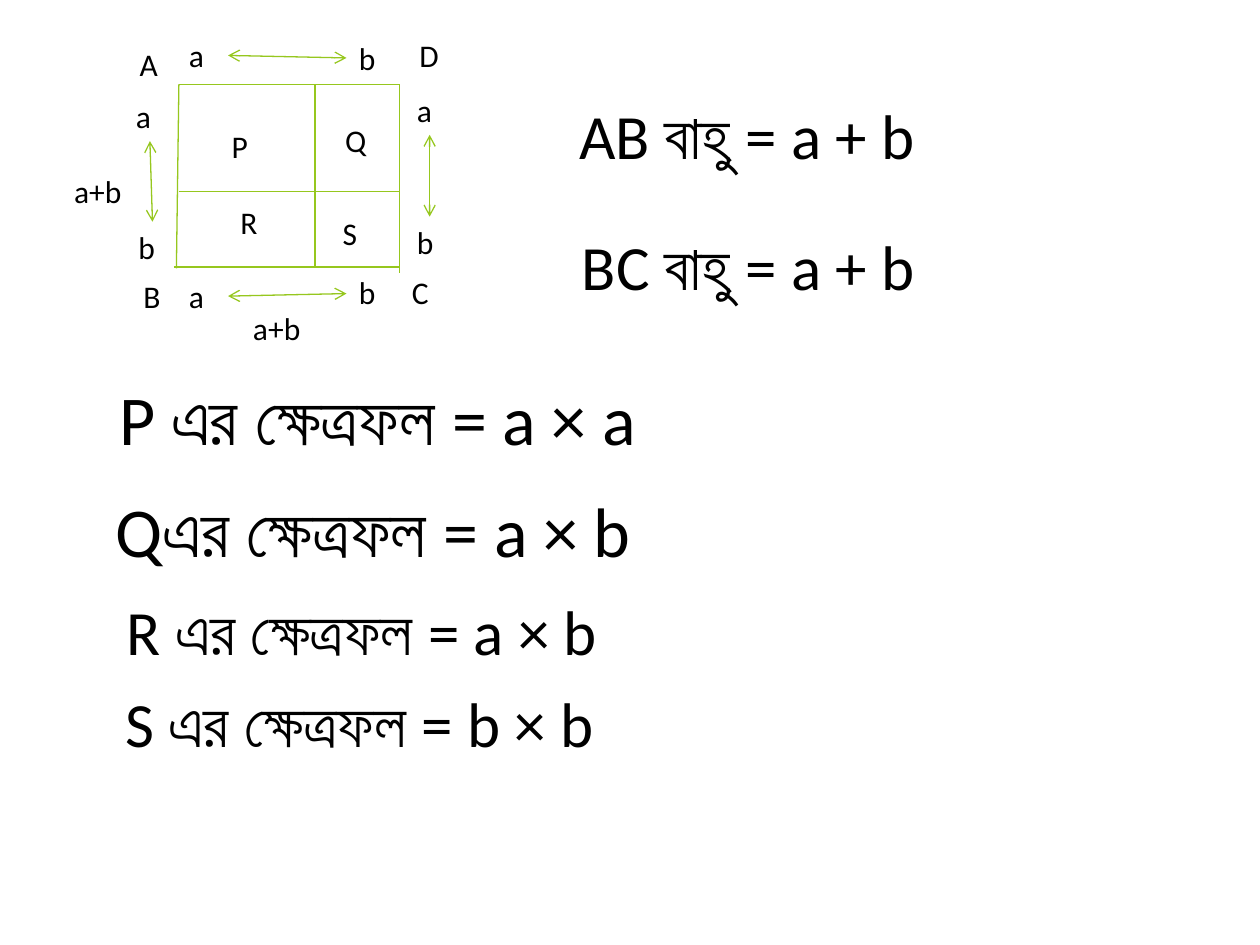
from lxml import etree
from pptx import Presentation
from pptx.dml.color import RGBColor
from pptx.enum.shapes import MSO_CONNECTOR
from pptx.enum.text import MSO_AUTO_SIZE
from pptx.oxml.ns import qn
from pptx.util import Inches, Pt

GREEN, BLACK = "96C71E", "000000"

prs = Presentation()
prs.slide_width, prs.slide_height = Inches(10), Inches(7.5)
s = prs.slides.add_slide(prs.slide_layouts[6])


def add_line(x1, y1, x2, y2, arrows=False):
    c = s.shapes.add_connector(MSO_CONNECTOR.STRAIGHT, Inches(x1), Inches(y1),
                               Inches(x2), Inches(y2))
    c.line.color.rgb = RGBColor.from_string(GREEN)
    c.line.width = Pt(0.75)
    if arrows:
        ln = c.line._get_or_add_ln()
        for end in ("a:headEnd", "a:tailEnd"):
            etree.SubElement(ln, qn(end), type="arrow")
    etree.SubElement(c._element.spPr, qn("a:effectLst"))


def add_text(text, x, y, w, h, size, wrap=True):
    tf = s.shapes.add_textbox(Inches(x), Inches(y), Inches(w), Inches(h)).text_frame
    tf.word_wrap = wrap
    tf.auto_size = MSO_AUTO_SIZE.SHAPE_TO_FIT_TEXT
    tf.text = text
    font = tf.paragraphs[0].runs[0].font
    font.name, font.size = "Calibri", Pt(size)
    font.color.rgb = RGBColor.from_string(BLACK)


# Square ABCD and its two dividing lines
left, top, right, bottom = 1.42, 0.67, 3.17, 2.12
for ends in [
    (right, top, right, 2.17),
    (left, top, 1.4, 2.13),
    (1.38, bottom, right, bottom),
    (left, top, right, top),
    (2.5, top, 2.5, bottom),
    (left, 1.52, right, 1.52),
]:
    add_line(*ends)

# Double arrows along the four sides
for ends in [
    (3.41, 1.07, 3.41, 1.72),
    (1.81, 0.44, 2.75, 0.46),
    (1.19, 1.12, 1.21, 1.76),
    (1.81, 2.35, 2.75, 2.33),
]:
    add_line(*ends, arrows=True)

# Side lengths
for label, x, y, w in [
    ("a", 1.4, 2.15, 0.38), ("a", 3.21, 0.67, 0.42),
    ("a", 0.98, 0.72, 0.42), ("a", 1.4, 0.24, 0.41),
    ("b", 3.21, 1.72, 0.42), ("b", 1, 1.76, 0.42),
    ("b", 2.75, 2.12, 0.42), ("b", 2.75, 0.26, 0.42),
    ("a+b", 0.49, 1.32, 0.67), ("a+b", 1.91, 2.4, 0.73),
]:
    add_text(label, x, y, w, 0.4, 18)

# Corner and region names
for label, x, y, w in [
    ("A", 1.01, 0.31, 0.37), ("B", 1.04, 2.15, 0.34),
    ("C", 3.17, 2.12, 0.38), ("D", 3.23, 0.24, 0.39),
    ("P", 1.74, 0.96, 0.33), ("Q", 2.64, 0.91, 0.41),
    ("R", 1.81, 1.56, 0.35), ("S", 2.62, 1.65, 0.32),
]:
    add_text(label, x, y, w, 0.4, 18, wrap=False)

# Side and area equations
for text, x, y, w, h, size in [
    ("AB বাহু = a + b", 4.5, 0.72, 3.5, 0.71, 36),
    ("BC বাহু = a + b", 4.52, 1.76, 3.48, 0.71, 36),
    ("P এর ক্ষেত্রফল = a × a", 0.85, 2.93, 4.7, 0.77, 40),
    ("Qএর ক্ষেত্রফল = a × b", 0.82, 3.82, 4.95, 0.77, 40),
    ("R এর ক্ষেত্রফল = a × b", 0.91, 4.65, 5.43, 0.71, 36),
    ("S এর ক্ষেত্রফল = b × b", 0.9, 5.38, 5.24, 0.71, 36),
]:
    add_text(text, x, y, w, h, size)

prs.save("out.pptx")
